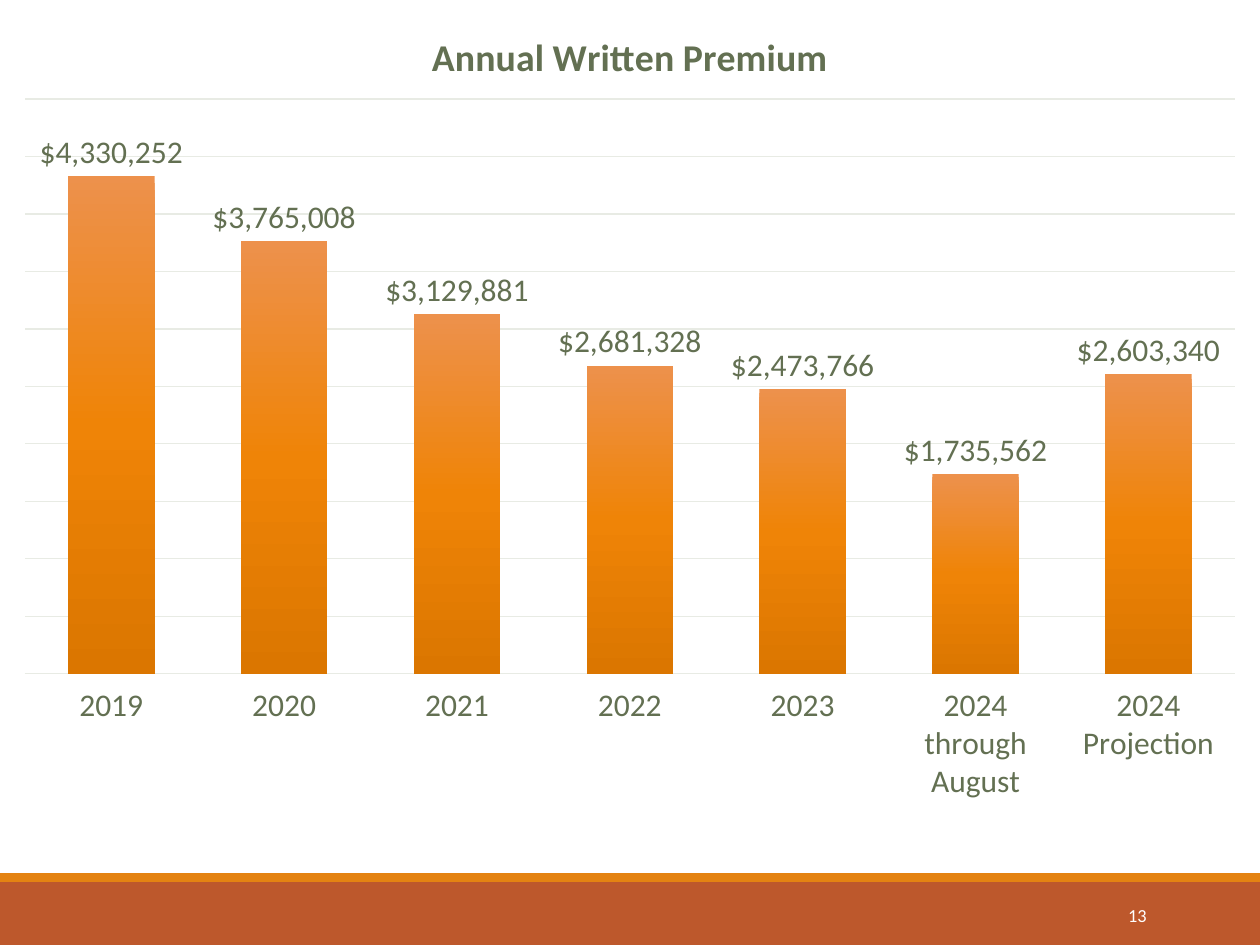
from copy import deepcopy
from pptx import Presentation
from pptx.chart.data import CategoryChartData as Data
from pptx.dml.color import RGBColor as RGB
from pptx.enum.chart import XL_CHART_TYPE as Kind, XL_LABEL_POSITION as Spot
from pptx.enum.chart import XL_TICK_MARK as Tick, XL_TICK_LABEL_POSITION as Place
from pptx.enum.shapes import MSO_SHAPE as Shape
from pptx.enum.text import MSO_ANCHOR as Anchor, PP_ALIGN as Align
from pptx.oxml import parse_xml
from pptx.oxml.ns import nsdecls
from pptx.util import Pt

PX = 914400 / 126
FONT = "Calibri"
MONEY = '"$"#,##0'
HUES = {"rust": "BD582C", "orange": "E48312", "white": "FFFFFF",
        "text": "637052", "grid": "E8EBE4",
        "top": "ED914C", "mid": "EF8407", "base": "DB7600"}
SALES = {"2019": 4330252, "2020": 3765008, "2021": 3129881,
         "2022": 2681328, "2023": 2473766,
         "2024 through August": 1735562, "2024 Projection": 2603340}


def px(*vals):
    """Turn px lengths into EMU."""
    return [round(val * PX) for val in vals]


def hue(name):
    """Return a named colour."""
    return RGB.from_string(HUES[name])


def style(font, size, name, bold=False):
    """Set the face, size, weight and colour of a font."""
    font.name, font.size, font.bold = FONT, Pt(size), bold
    font.color.rgb = hue(name)


def rule(line):
    """Format an axis line or grid line."""
    line.color.rgb = hue("grid")
    line.width = Pt(0.75)


def shade(ser):
    """Fill the columns with a three-stop gradient from top to base."""
    fill = ser.format.fill
    fill.gradient()
    stops = ser._element.xpath(".//a:gsLst")[0]
    stops.insert(1, deepcopy(stops[0]))
    for stop, pos, name in zip(fill.gradient_stops, (0, 0.5, 1), ("top", "mid", "base")):
        stop.position = pos
        stop.color.rgb = hue(name)
    fill.gradient_angle = 270


def frame(chart, box, plot):
    """Fix the inner plot area inside the chart box."""
    left, top, wide, high = box
    parts = {"x": (plot[0] - left) / wide, "y": (plot[1] - top) / high,
             "w": plot[2] / wide, "h": plot[3] / high}
    modes = "".join(f'<c:{key}Mode val="edge"/>' for key in "xy")
    sizes = "".join(f'<c:{key} val="{val:.4f}"/>' for key, val in parts.items())
    area = chart._chartSpace.xpath(".//c:plotArea")[0]
    for old in area.xpath("c:layout"):
        area.remove(old)
    area.insert(0, parse_xml(
        f'<c:layout {nsdecls("c")}><c:manualLayout><c:layoutTarget val="inner"/>'
        f'{modes}{sizes}</c:manualLayout></c:layout>'))


def draw_chart(slide, box):
    """Place the premium column chart in its box."""
    data = Data(number_format=MONEY)
    data.categories = list(SALES)
    data.add_series("Series 1", list(SALES.values()))
    chart = slide.shapes.add_chart(Kind.COLUMN_CLUSTERED, *px(*box), data).chart
    style(chart.font, 18, "text")
    chart.has_legend = False
    chart.has_title = True
    run = chart.chart_title.text_frame.paragraphs[0].add_run()
    run.text = "Annual Written Premium"
    style(run.font, 21.6, "text", True)
    chart.chart_title.include_in_layout = False

    plot = chart.plots[0]
    plot.gap_width, plot.overlap, plot.vary_by_categories = 100, -24, False
    plot.has_data_labels = True
    tags = plot.data_labels
    tags.show_value = True
    tags.position = Spot.OUTSIDE_END
    tags.number_format, tags.number_format_is_linked = MONEY, False
    style(tags.font, 18, "text")
    shade(plot.series[0])

    cats = chart.category_axis
    cats.major_tick_mark = cats.minor_tick_mark = Tick.NONE
    cats.tick_label_position = Place.LOW
    style(cats.tick_labels.font, 18, "text")
    rule(cats.format.line)
    vals = chart.value_axis
    vals.visible = False
    vals.minimum_scale, vals.maximum_scale, vals.major_unit = 0, 5000000, 500000
    vals.has_major_gridlines = True
    rule(vals.major_gridlines.format.line)
    left, top, wide, _ = box
    frame(chart, box, (left + 25, top + 99, wide - 50, 575))


def draw_foot(slide, box):
    """Place the two footer bands and the page number in the box."""
    left, top, wide, high = box
    for y, tall, name in ((9, high - 9, "rust"), (0, 9, "orange")):
        band = slide.shapes.add_shape(Shape.RECTANGLE, *px(left, top + y, wide, tall))
        band.shadow.inherit = False
        band.fill.solid()
        band.fill.fore_color.rgb = hue(name)
        band.line.fill.background()
    text = slide.shapes.add_textbox(*px(left + 1023, top + 17, 136, 50)).text_frame
    text.word_wrap = True
    text.vertical_anchor = Anchor.MIDDLE
    para = text.paragraphs[0]
    para.alignment = Align.RIGHT
    run = para.add_run()
    run.text = "13"
    style(run.font, 10.5, "white")


def main():
    """Build the slide and save it."""
    deck = Presentation()
    deck.slide_width, deck.slide_height = px(1260, 945)
    slide = deck.slides.add_slide(deck.slide_layouts[6])
    draw_foot(slide, (0, 873, 1260, 72))
    draw_chart(slide, (0, 0, 1260, 810))
    deck.save("out.pptx")


if __name__ == "__main__":
    main()
